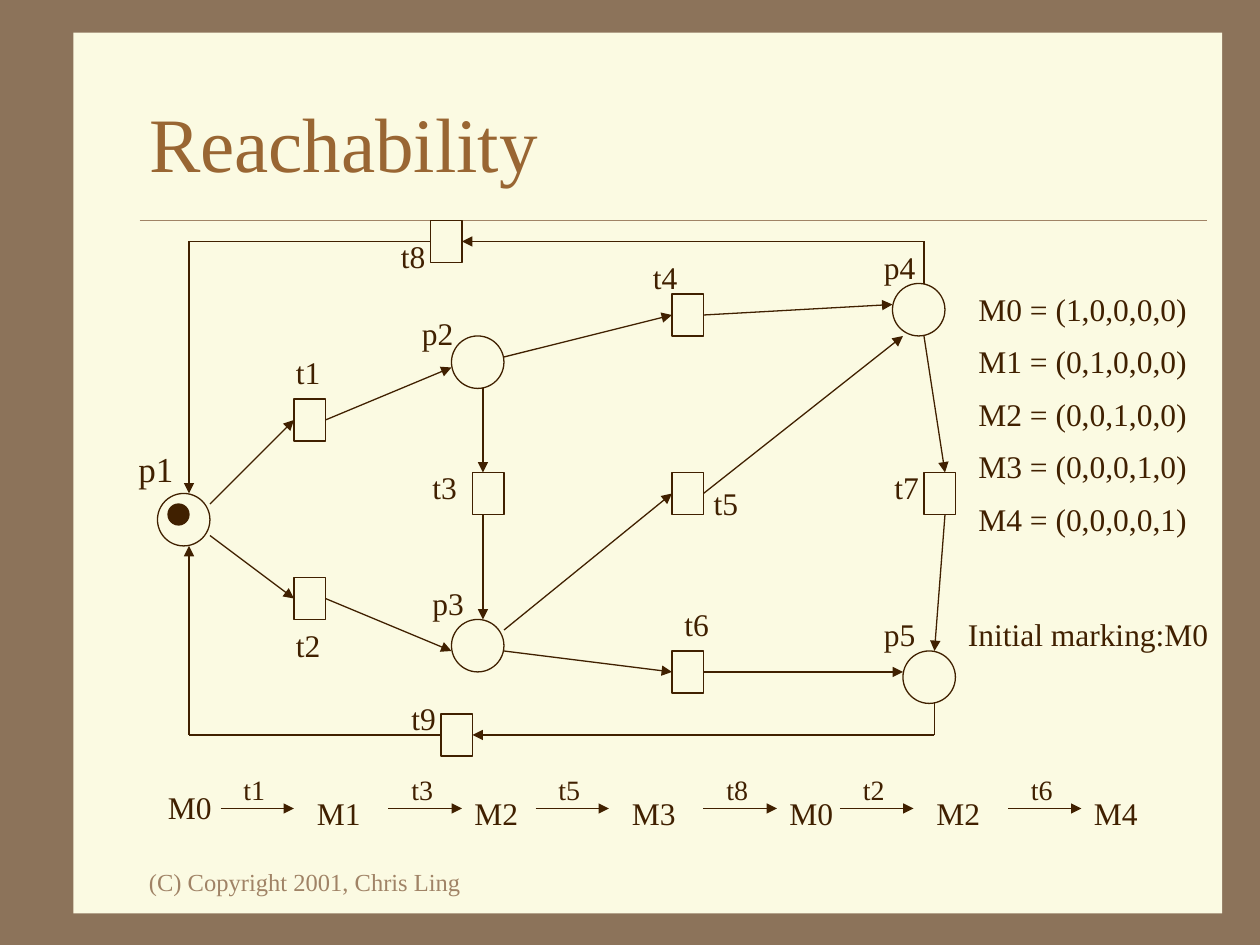
from lxml import etree
from pptx import Presentation
from pptx.dml.color import RGBColor
from pptx.enum import shapes, text
from pptx.oxml.ns import qn
from pptx.util import Pt

PX = 7620
COLOURS = {"frame": "8C735A", "panel": "FBFAE2", "muted": "A08366",
           "title": "996633", "ink": "402000"}
FONT = "Times New Roman"
PLACE, TRANSITION_W, TRANSITION_H = 50, 30, 40
WIDTHS = {"t": 48, "p": 54, "M": 66}
TITLE_FRAME = {"word_wrap": True, "vertical_anchor": text.MSO_ANCHOR.MIDDLE}
LABEL_FRAME = {"word_wrap": False, "auto_size": text.MSO_AUTO_SIZE.SHAPE_TO_FIT_TEXT,
               "vertical_anchor": text.MSO_ANCHOR.TOP}

# name: node left, node top, label left, label top
PLACES = {
    "p1": (150, 470, 120, 420), "p2": (430, 320, 390, 293),
    "p3": (430, 590, 400, 550), "p4": (850, 270, 830, 230),
    "p5": (860, 620, 830, 580),
}
TRANSITIONS = {
    "t1": (280, 380, 270, 330), "t2": (280, 550, 270, 590),
    "t3": (450, 450, 400, 440), "t4": (640, 280, 610, 240),
    "t5": (640, 450, 668, 455), "t6": (640, 620, 640, 570),
    "t7": (880, 450, 840, 440), "t8": (410, 210, 370, 220),
    "t9": (420, 680, 380, 660),
}
ARROWS = [
    ((200, 480), (280, 400)), ((200, 510), (280, 570)),
    ((310, 400), (430, 350)), ((310, 570), (430, 620)),
    ((480, 340), (640, 300)), ((670, 300), (850, 290)),
    ((460, 370), (460, 450)), ((460, 490), (460, 590)),
    ((480, 600), (640, 470)), ((670, 470), (860, 320)),
    ((480, 620), (640, 640)), ((670, 640), (860, 640)),
    ((880, 320), (900, 450)), ((900, 490), (890, 620)),
    ((890, 700), (450, 700)), ((180, 700), (180, 520)),
    ((880, 230), (440, 230)), ((180, 230), (180, 470)),
]
PLAIN_LINES = [
    ((890, 670), (890, 700)), ((420, 700), (180, 700)),
    ((880, 270), (880, 230)), ((410, 230), (180, 230)),
]
STATES = [("M0", 148, 745), ("M1", 290, 750), ("M2", 440, 750), ("M3", 590, 750),
          ("M0", 740, 750), ("M2", 880, 750), ("M4", 1030, 750)]
FIRINGS = [("t1", 210), ("t3", 370), ("t5", 510), ("t8", 670), ("t2", 800), ("t6", 960)]


def px(*lengths):
    """Turn pixel lengths into EMU."""
    return [length * PX for length in lengths]


def colour(name):
    """Look up a named colour."""
    return RGBColor.from_string(COLOURS[name])


def write(shape, words, size, ink, frame):
    """Put one formatted left-aligned line into a shape."""
    for key, value in frame.items():
        setattr(shape.text_frame, key, value)
    para = shape.text_frame.paragraphs[0]
    para.alignment = text.PP_ALIGN.LEFT
    span = para.add_run()
    span.text = words
    for key, value in {"name": FONT, "size": Pt(size), "bold": False}.items():
        setattr(span.font, key, value)
    span.font.color.rgb = colour(ink)


def add_label(page, words, left, top, width, height=48, size=18, ink="ink"):
    """Add a line of text that does not wrap."""
    box = page.shapes.add_textbox(*px(left, top, width, height))
    write(box, words, size, ink, LABEL_FRAME)


def add_figure(page, kind, left, top, width, height, fill=None, line="ink"):
    """Add a filled or hollow preset shape."""
    figure = page.shapes.add_shape(kind, *px(left, top, width, height))
    figure.shadow.inherit = False
    if fill:
        figure.fill.solid()
        figure.fill.fore_color.rgb = colour(fill)
    else:
        figure.fill.background()
    if line:
        figure.line.color.rgb = colour(line)
        figure.line.width = Pt(0.75)
    else:
        figure.line.fill.background()
    return figure


def add_line(page, start, end, sides=None, head=True, ink="ink", width=0.75):
    """Draw a line, joined to any transition side that it touches."""
    line = page.shapes.add_connector(shapes.MSO_CONNECTOR.STRAIGHT, *px(*start, *end))
    line.line.color.rgb = colour(ink)
    line.line.width = Pt(width)
    for point, join in ((start, line.begin_connect), (end, line.end_connect)):
        if sides and point in sides:
            join(*sides[point])
    if head:
        etree.SubElement(line.line._get_or_add_ln(), qn("a:tailEnd"), type="triangle")
    etree.SubElement(line._element.spPr, qn("a:effectLst"))


def add_template(deck):
    """Add the page with its panel, rule, title and footer."""
    page = deck.slides.add_slide(deck.slide_layouts[5])
    page.background.fill.solid()
    page.background.fill.fore_color.rgb = colour("frame")
    add_figure(page, shapes.MSO_SHAPE.RECTANGLE, 70, 31, 1094, 839, "panel", None)
    add_line(page, (133, 210), (1150, 210), head=False, ink="muted", width=0.25)
    add_label(page, "(C) Copyright 2001, Chris Ling", 130, 820, 330, 40, 14, "muted")
    title = page.shapes.title
    title.left, title.top, title.width, title.height = px(130, 60, 1020, 150)
    write(title, "Reachability", 44, "title", TITLE_FRAME)
    page.shapes._spTree.append(title._element)
    return page


def add_net(page):
    """Draw the Petri net with its places, transitions and arcs."""
    sides = {}
    for left, top, *_ in PLACES.values():
        add_figure(page, shapes.MSO_SHAPE.OVAL, left, top, PLACE, PLACE)
    for left, top, *_ in TRANSITIONS.values():
        box = add_figure(page, shapes.MSO_SHAPE.RECTANGLE, left, top,
                         TRANSITION_W, TRANSITION_H)
        middle = top + TRANSITION_H // 2
        sides[left, middle] = box, 1
        sides[left + TRANSITION_W, middle] = box, 3
    for start, end in ARROWS:
        add_line(page, start, end, sides)
    for start, end in PLAIN_LINES:
        add_line(page, start, end, sides, head=False)
    for name, (*_, left, top) in {**PLACES, **TRANSITIONS}.items():
        if name == "p1":
            add_label(page, name, left, top, 58, 52, 20)
        else:
            add_label(page, name, left, top, WIDTHS[name[0]])
    add_figure(page, shapes.MSO_SHAPE.OVAL, 160, 480, 20, 20, "ink")
    add_label(page, "Initial marking:M0", 910, 580, 253)


def add_firing_sequence(page):
    """Add the row of markings and the transitions between them."""
    for name, left, top in STATES:
        add_label(page, name, left, top, WIDTHS["M"])
    for name, left in FIRINGS:
        add_line(page, (left, 770), (left + 70, 770))
        add_label(page, name, left + 10, 730, 46, 44, 16)


def add_markings(page):
    """List the five markings, each with its token in one place."""
    for row in range(5):
        tokens = ",".join(str(int(place == row)) for place in range(5))
        add_label(page, f"M{row} = ({tokens})", 920, 270 + 50 * row, 223)


def main():
    """Build and save the deck."""
    deck = Presentation()
    deck.slide_width, deck.slide_height = px(1200, 900)
    page = add_template(deck)
    add_net(page)
    add_firing_sequence(page)
    add_markings(page)
    deck.save("out.pptx")


if __name__ == "__main__":
    main()
